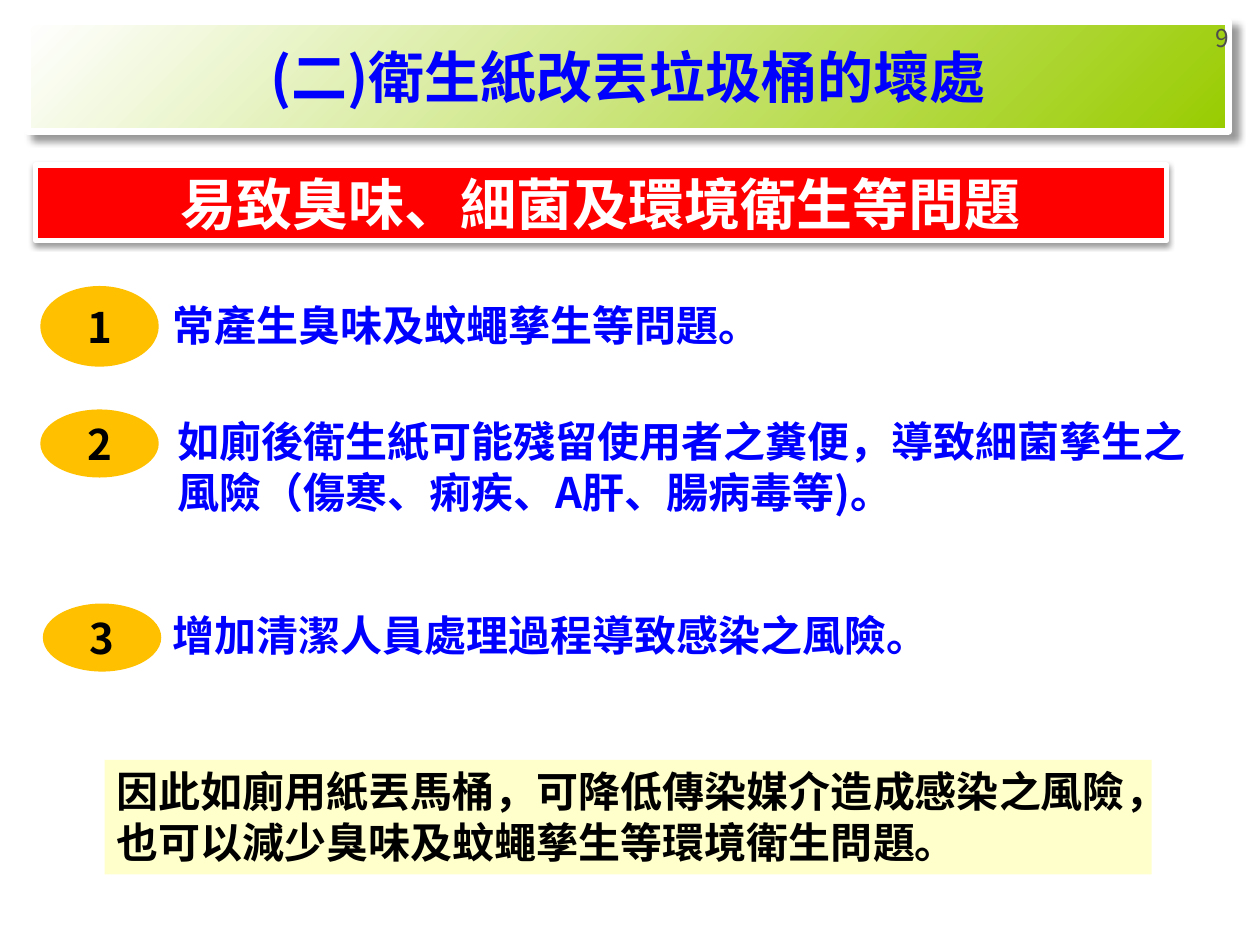
from dataclasses import dataclass

import lxml.etree
import pptx
import pptx.dml.color
import pptx.enum.shapes
import pptx.enum.text
import pptx.oxml.ns
import pptx.util

Inches = pptx.util.Inches
Pt = pptx.util.Pt
qn = pptx.oxml.ns.qn
SHAPE = pptx.enum.shapes.MSO_SHAPE
ALIGN = pptx.enum.text.PP_ALIGN
ANCHOR = pptx.enum.text.MSO_ANCHOR


@dataclass(frozen=True)
class Theme:
    font: str = "Noto Sans CJK SC"
    heading_size: int = 32
    body_size: int = 24
    number_size: int = 14
    white: str = "FFFFFF"
    black: str = "000000"
    blue: str = "0000FF"
    green: str = "99CC00"
    red: str = "FF0000"
    amber: str = "FFC000"
    cream: str = "FFFFCC"
    grey: str = "4D4D4D"


THEME = Theme()

# Badge left, top, height; text left, top, width, height; wording
POINTS = [
    ((0.32, 2.27, 0.64), (1.27, 2.33, 8.16, 0.5), "常產生臭味及蚊蠅孳生等問題。"),
    ((0.32, 3.25, 0.54), (1.31, 3.25, 8.22, 1.31),
     "如廁後衛生紙可能殘留使用者之糞便，導致細菌孳生之風險（傷寒、痢疾、A肝、腸病毒等)。"),
    ((0.34, 4.79, 0.54), (1.27, 4.79, 8.14, 0.5), "增加清潔人員處理過程導致感染之風險。"),
]
BADGE_WIDTH = 0.94


def rgb(value):
    return pptx.dml.color.RGBColor.from_string(value)


def write(shape, text, size, color, align=ALIGN.LEFT, anchor=ANCHOR.TOP, bold=True):
    frame = shape.text_frame
    frame.text = text
    frame.word_wrap = True
    frame.auto_size = pptx.enum.text.MSO_AUTO_SIZE.NONE
    frame.vertical_anchor = anchor
    paragraph = frame.paragraphs[0]
    paragraph.alignment = align
    font = paragraph.runs[0].font
    font.name, font.size, font.bold = THEME.font, Pt(size), bold
    font.color.rgb = rgb(color)
    east_asian = lxml.etree.SubElement(paragraph.runs[0].font._element, qn("a:ea"))
    east_asian.set("typeface", THEME.font)


def add_panel(slide, preset, box, fill=None):
    panel = slide.shapes.add_shape(preset, *map(Inches, box))
    panel.shadow.inherit = False
    panel.line.fill.background()
    if fill:
        panel.fill.solid()
        panel.fill.fore_color.rgb = rgb(fill)
    else:
        panel.fill.background()
    return panel


def frame_with_shadow(shape, border, alpha, blur, distance, angle):
    """Give a white border and an outer shadow; border, blur and distance in points."""
    shape.line.color.rgb = rgb(THEME.white)
    shape.line.width = Pt(border)
    shape.shadow.inherit = False
    effects = shape._element.spPr.find(qn("a:effectLst"))
    shadow = lxml.etree.SubElement(
        effects, qn("a:outerShdw"), blurRad=str(Pt(blur)), dist=str(Pt(distance)),
        dir=str(angle * 60000), algn="tl", rotWithShape="0")
    color = lxml.etree.SubElement(shadow, qn("a:srgbClr"), val=THEME.black)
    lxml.etree.SubElement(color, qn("a:alpha"), val=str(alpha * 1000))


def add_title(slide, text):
    title = slide.shapes.title
    title.left, title.top, title.width, title.height = map(Inches, (0.22, 0.17, 9.53, 0.87))
    outline = lxml.etree.SubElement(title._element.spPr, qn("a:prstGeom"), prst="roundRect")
    lxml.etree.SubElement(outline, qn("a:avLst"))
    title.fill.gradient()
    title.fill.gradient_angle = 315
    for stop, color in zip(title.fill.gradient_stops, (THEME.white, THEME.green)):
        stop.color.rgb = rgb(color)
    frame_with_shadow(title, border=4, alpha=40, blur=4, distance=5, angle=45)
    write(title, text, THEME.heading_size, THEME.blue, ALIGN.CENTER, ANCHOR.MIDDLE)


def add_page_number(slide, number):
    holder = add_panel(slide, SHAPE.OVAL, (9.25, 0.05, 0.71, 0.55))
    write(holder, number, THEME.number_size, THEME.grey, ALIGN.RIGHT, bold=False)


def add_headline(slide, text):
    headline = add_panel(slide, SHAPE.RECTANGLE, (0.28, 1.31, 8.98, 0.6), THEME.red)
    frame_with_shadow(headline, border=3, alpha=38, blur=3.1, distance=1.6, angle=90)
    write(headline, text, THEME.heading_size, THEME.white, ALIGN.CENTER, ANCHOR.MIDDLE)


def add_point(slide, number, badge_place, text_box, text):
    left, top, height = badge_place
    badge = add_panel(slide, SHAPE.OVAL, (left, top, BADGE_WIDTH, height), THEME.amber)
    write(badge, str(number), THEME.body_size, THEME.black, ALIGN.CENTER, ANCHOR.MIDDLE)
    statement = slide.shapes.add_textbox(*map(Inches, text_box))
    write(statement, text, THEME.body_size, THEME.blue)


def add_conclusion(slide, text):
    conclusion = add_panel(slide, SHAPE.RECTANGLE, (0.83, 6.03, 8.31, 0.91), THEME.cream)
    write(conclusion, text, THEME.body_size, THEME.black)


def main():
    deck = pptx.Presentation()
    deck.slide_width, deck.slide_height = Inches(10), Inches(7.5)
    slide = deck.slides.add_slide(deck.slide_layouts.get_by_name("Title Only"))
    add_title(slide, "(二)衛生紙改丟垃圾桶的壞處")
    add_page_number(slide, "9")
    add_headline(slide, "易致臭味、細菌及環境衛生等問題")
    for number, point in enumerate(POINTS, start=1):
        add_point(slide, number, *point)
    add_conclusion(slide, "因此如廁用紙丟馬桶，可降低傳染媒介造成感染之風險，"
                          "也可以減少臭味及蚊蠅孳生等環境衛生問題。")
    deck.save("out.pptx")


if __name__ == "__main__":
    main()
